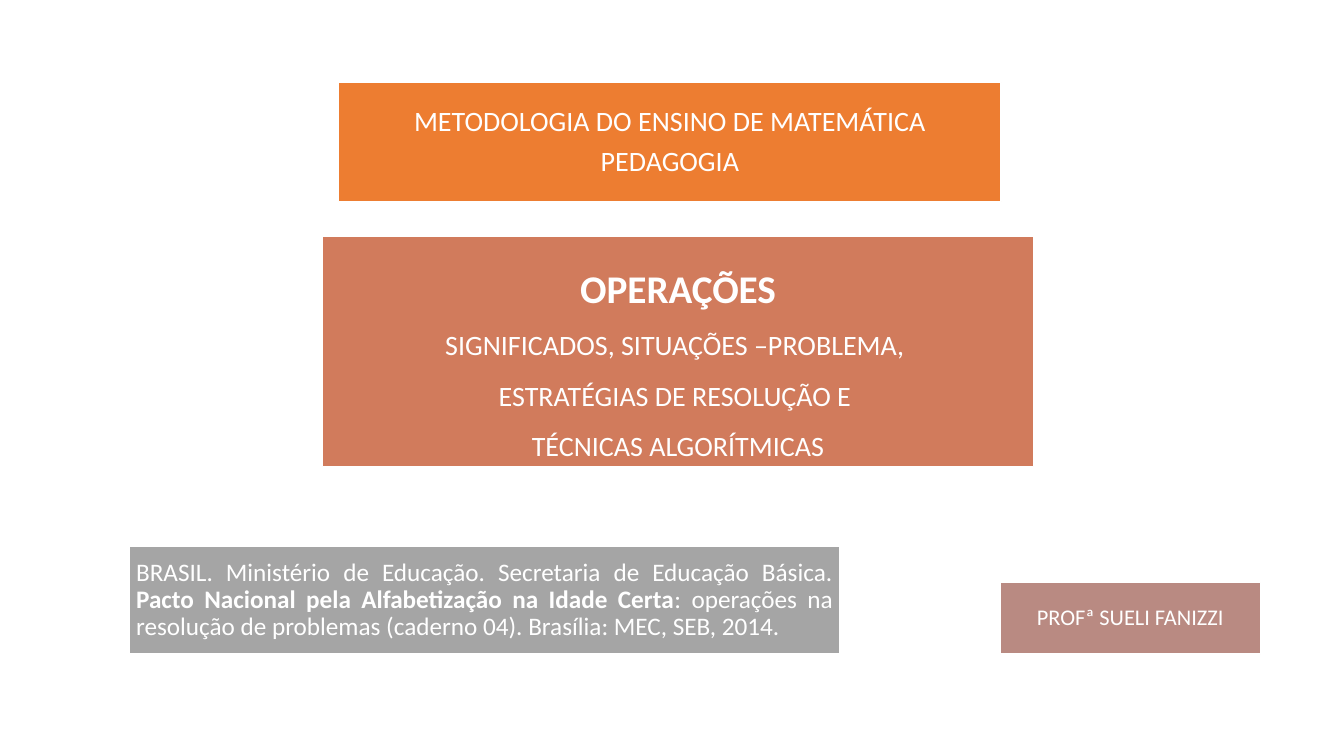
from dataclasses import dataclass
from pptx import Presentation, util as u
from pptx.dml.color import RGBColor
from pptx.enum import shapes, text


@dataclass(frozen=True)
class Theme:
    font: str = "Calibri"
    white: str = "FFFFFF"
    orange: str = "ED7D31"
    clay: str = "D17B5C"
    rose: str = "B98A82"
    gray: str = "A5A5A5"
    head: int = 28
    body: int = 20
    cite: int = 18
    name: int = 16


T = Theme()
MID = text.PP_ALIGN.CENTER
FULL = text.PP_ALIGN.JUSTIFY


def panel(slide, box, fill, pad):
    rect = slide.shapes.add_shape(
        shapes.MSO_SHAPE.RECTANGLE, *map(u.Inches, box))
    rect.shadow.inherit = False
    rect.fill.solid()
    rect.fill.fore_color.rgb = RGBColor.from_string(fill)
    rect.line.color.rgb = RGBColor.from_string(T.white)
    rect.line.width = u.Pt(1)
    frame = rect.text_frame
    frame.word_wrap = True
    frame.vertical_anchor = text.MSO_ANCHOR.MIDDLE
    frame.margin_left = frame.margin_right = u.Inches(pad)
    frame.margin_top = frame.margin_bottom = u.Inches(pad)
    return frame


def write(frame, lines, align=MID, lead=0.9, gap=0.35):
    for i, (size, runs) in enumerate(lines):
        para = frame.add_paragraph() if i else frame.paragraphs[0]
        para.alignment = align
        para.line_spacing = lead
        para.space_before = u.Pt(0)
        para.space_after = u.Pt(size * gap)
        for words, bold in runs:
            run = para.add_run()
            run.text = words
            run.font.name = T.font
            run.font.size = u.Pt(size)
            run.font.bold = bold
            run.font.color.rgb = RGBColor.from_string(T.white)


def course(slide, box):
    rows = ["METODOLOGIA DO ENSINO DE MATEMÁTICA", "PEDAGOGIA"]
    write(panel(slide, box, T.orange, 0.08),
          [(T.body, [(row, False)]) for row in rows])


def topic(slide, box):
    rows = ["SIGNIFICADOS, SITUAÇÕES –PROBLEMA, ",
            "ESTRATÉGIAS DE RESOLUÇÃO E ",
            "TÉCNICAS ALGORÍTMICAS"]
    lines = [(T.head, [("OPERAÇÕES", True)])]
    lines += [(T.body, [(row, False)]) for row in rows]
    write(panel(slide, box, T.clay, 0.12), lines, lead=1.5, gap=0)


def teacher(slide, box):
    write(panel(slide, box, T.rose, 0.07),
          [(T.name, [("PROFª SUELI FANIZZI", False)])])


def source(slide, box):
    runs = [
        ("BRASIL. Ministério de Educação. Secretaria de Educação Básica. ",
         False),
        ("Pacto Nacional pela Alfabetização na Idade Certa", True),
        (": operações na resolução de problemas (caderno 04). "
         "Brasília: MEC, SEB, 2014.", False),
    ]
    write(panel(slide, box, T.gray, 0.07), [(T.cite, runs)], align=FULL)


def main():
    deck = Presentation()
    deck.slide_width = u.Inches(13.33)
    deck.slide_height = u.Inches(7.5)
    slide = deck.slides.add_slide(deck.slide_layouts[6])
    course(slide, (3.36, 0.82, 6.57, 1.18))
    topic(slide, (3.2, 2.34, 7.05, 2.29))
    teacher(slide, (9.92, 5.78, 2.58, 0.71))
    source(slide, (1.28, 5.42, 7.05, 1.07))
    deck.save("out.pptx")


if __name__ == "__main__":
    main()
